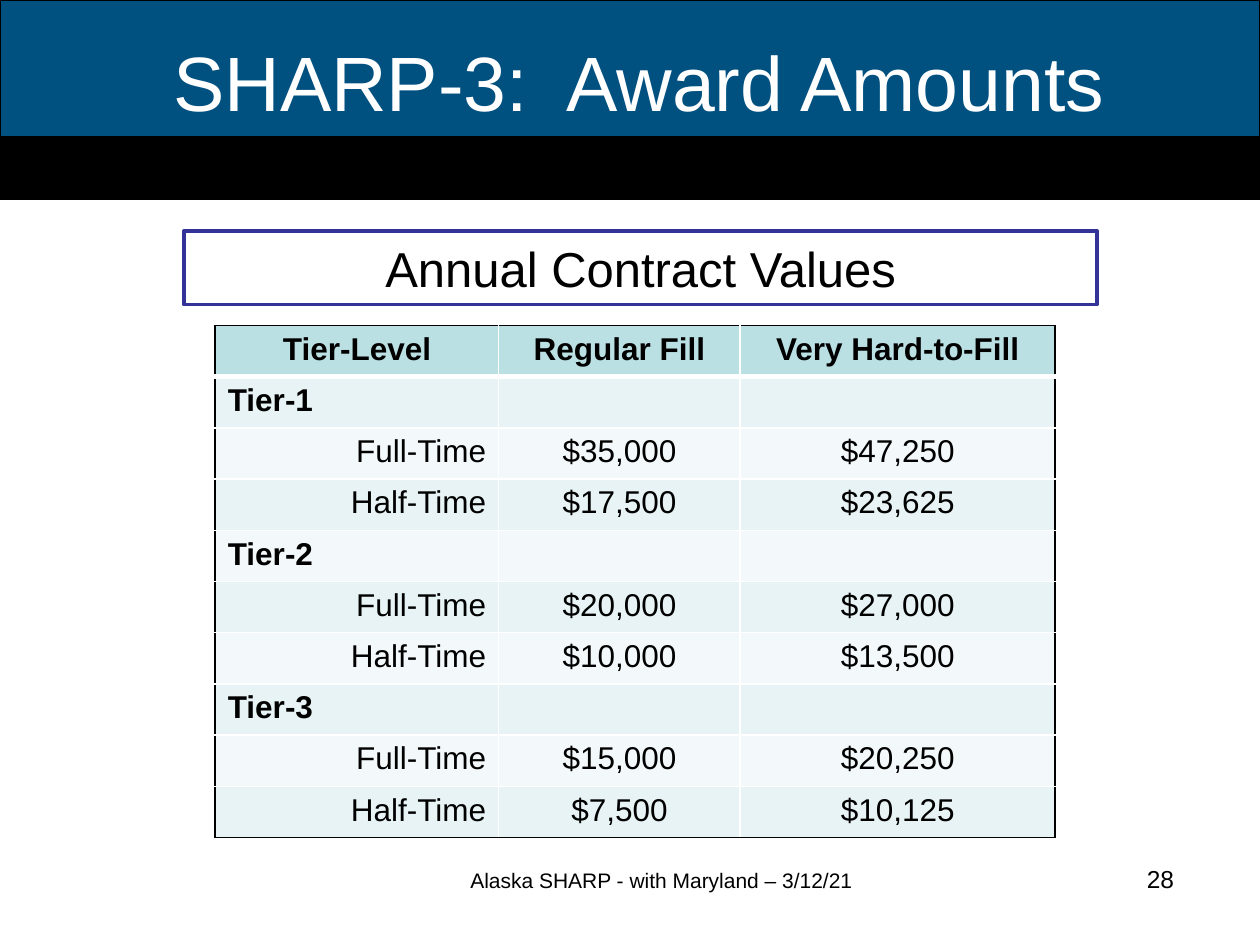
import dataclasses

import lxml.etree
import pptx
import pptx.dml.color
import pptx.enum.shapes
import pptx.enum.text
import pptx.oxml.ns
import pptx.util

UNIT = pptx.util.Inches(1) / 12  # the slide is a grid of 120 columns, 90 rows
FONT = "Arial"
BLACK, WHITE = "000000", "FFFFFF"
ALIGN = pptx.enum.text.PP_ALIGN
ANCHOR = pptx.enum.text.MSO_ANCHOR
HEAD = ("Tier-Level", "Regular Fill", "Very Hard-to-Fill")
TIERS = {
    "Tier-1": (("$35,000", "$47,250"), ("$17,500", "$23,625")),
    "Tier-2": (("$20,000", "$27,000"), ("$10,000", "$13,500")),
    "Tier-3": (("$15,000", "$20,250"), ("$7,500", "$10,125")),
}
TERMS = ("Full-Time", "Half-Time")
WIDTHS = (27, 23, 30)
ROW = 4.88


@dataclasses.dataclass
class Box:
    """A place in grid columns and rows."""
    left: float
    top: float
    wide: float
    high: float

    def spans(self) -> list[int]:
        return [grid(n) for n in (self.left, self.top, self.wide, self.high)]


@dataclasses.dataclass
class Band:
    box: Box
    fill: str
    edge: str = BLACK
    width: float = 0.75


@dataclasses.dataclass
class Label:
    text: str
    size: float
    align: ALIGN = ALIGN.CENTER
    hue: str = BLACK
    bold: bool = False


def grid(count: float) -> int:
    return round(count * UNIT)


def color(code: str) -> pptx.dml.color.RGBColor:
    return pptx.dml.color.RGBColor.from_string(code)


def write(frame, label: Label) -> None:
    para = frame.paragraphs[0]
    para.alignment = label.align
    run = para.add_run()
    run.text = label.text
    run.font.name = FONT
    run.font.size = pptx.util.Pt(label.size)
    run.font.bold = label.bold
    run.font.color.rgb = color(label.hue)


def draw_band(slide, band: Band):
    shape = slide.shapes.add_shape(
        pptx.enum.shapes.MSO_SHAPE.RECTANGLE, *band.box.spans())
    shape.shadow.inherit = False
    shape.fill.solid()
    shape.fill.fore_color.rgb = color(band.fill)
    shape.line.color.rgb = color(band.edge)
    shape.line.width = pptx.util.Pt(band.width)
    return shape


def draw_title(slide, box: Box, label: Label) -> None:
    title = slide.shapes.title
    title.left, title.top, title.width, title.height = box.spans()
    frame = title.text_frame
    frame.auto_size = pptx.enum.text.MSO_AUTO_SIZE.NONE
    frame.vertical_anchor = ANCHOR.TOP
    frame.margin_top = pptx.util.Inches(0.11)
    write(frame, label)
    slide.shapes.element.append(title.element)  # bring in front of the bands


def draw_text(slide, box: Box, label: Label) -> None:
    frame = slide.shapes.add_textbox(*box.spans()).text_frame
    frame.word_wrap = True
    write(frame, label)


def set_edge(cell, side: str, hue: str, width: float) -> None:
    """Add one border; sides must come in the order L, R, T, B, before the fill."""
    qn = pptx.oxml.ns.qn
    props = cell._tc.get_or_add_tcPr()
    line = lxml.etree.SubElement(
        props, qn(f"a:ln{side}"), w=str(pptx.util.Pt(width)))
    fill = lxml.etree.SubElement(line, qn("a:solidFill"))
    lxml.etree.SubElement(fill, qn("a:srgbClr"), val=hue)


def draw_table(slide, left: float, top: float) -> None:
    rows = [HEAD]
    for tier, pays in TIERS.items():
        rows.append((tier, "", ""))
        rows += [(term, *pay) for term, pay in zip(TERMS, pays)]
    last, end = len(rows) - 1, len(HEAD) - 1
    box = Box(left, top, sum(WIDTHS), ROW * len(rows))
    table = slide.shapes.add_table(len(rows), len(HEAD), *box.spans()).table
    for col, wide in zip(table.columns, WIDTHS):
        col.width = grid(wide)
    for r, texts in enumerate(rows):
        table.rows[r].height = grid(ROW)
        for c, text in enumerate(texts):
            cell = table.cell(r, c)
            outer = {"L": c == 0, "R": c == end, "T": r == 0, "B": r == last}
            for side, out in outer.items():
                thick = (r, side) in ((0, "B"), (1, "T"))
                set_edge(cell, side, BLACK if out else WHITE, 3 if thick else 1)
            cell.fill.solid()
            shade = "BBE0E3" if r == 0 else "E7F3F4" if r % 2 else "F3F9FA"
            cell.fill.fore_color.rgb = color(shade)
            if text:
                tier = text in TIERS
                align = (ALIGN.LEFT if tier else
                         ALIGN.RIGHT if text in TERMS else ALIGN.CENTER)
                write(cell.text_frame,
                      Label(text, 18, align, bold=tier or r == 0))


def main() -> None:
    deck = pptx.Presentation()
    deck.slide_width, deck.slide_height = grid(120), grid(90)
    slide = deck.slides.add_slide(deck.slide_layouts.get_by_name("Title Only"))
    draw_band(slide, Band(Box(0, 0, 120, 19), "005080"))
    draw_band(slide, Band(Box(0, 13, 120, 6), BLACK))
    draw_title(slide, Box(10.7, 2, 100.4, 9),
               Label("SHARP-3:  Award Amounts", 44, hue=WHITE))
    draw_table(slide, 20.5, 31)
    draw_text(slide, Box(34, 82, 58, 4),
              Label("Alaska SHARP - with Maryland – 3/12/21", 12))
    draw_text(slide, Box(85, 81.7, 28, 6.2), Label("28", 14, ALIGN.RIGHT))
    head = draw_band(slide, Band(Box(17.5, 22, 87, 7), WHITE, "333399", 2))
    head.text_frame.vertical_anchor = ANCHOR.MIDDLE
    write(head.text_frame, Label("Annual Contract Values", 28))
    deck.save("out.pptx")


if __name__ == "__main__":
    main()
